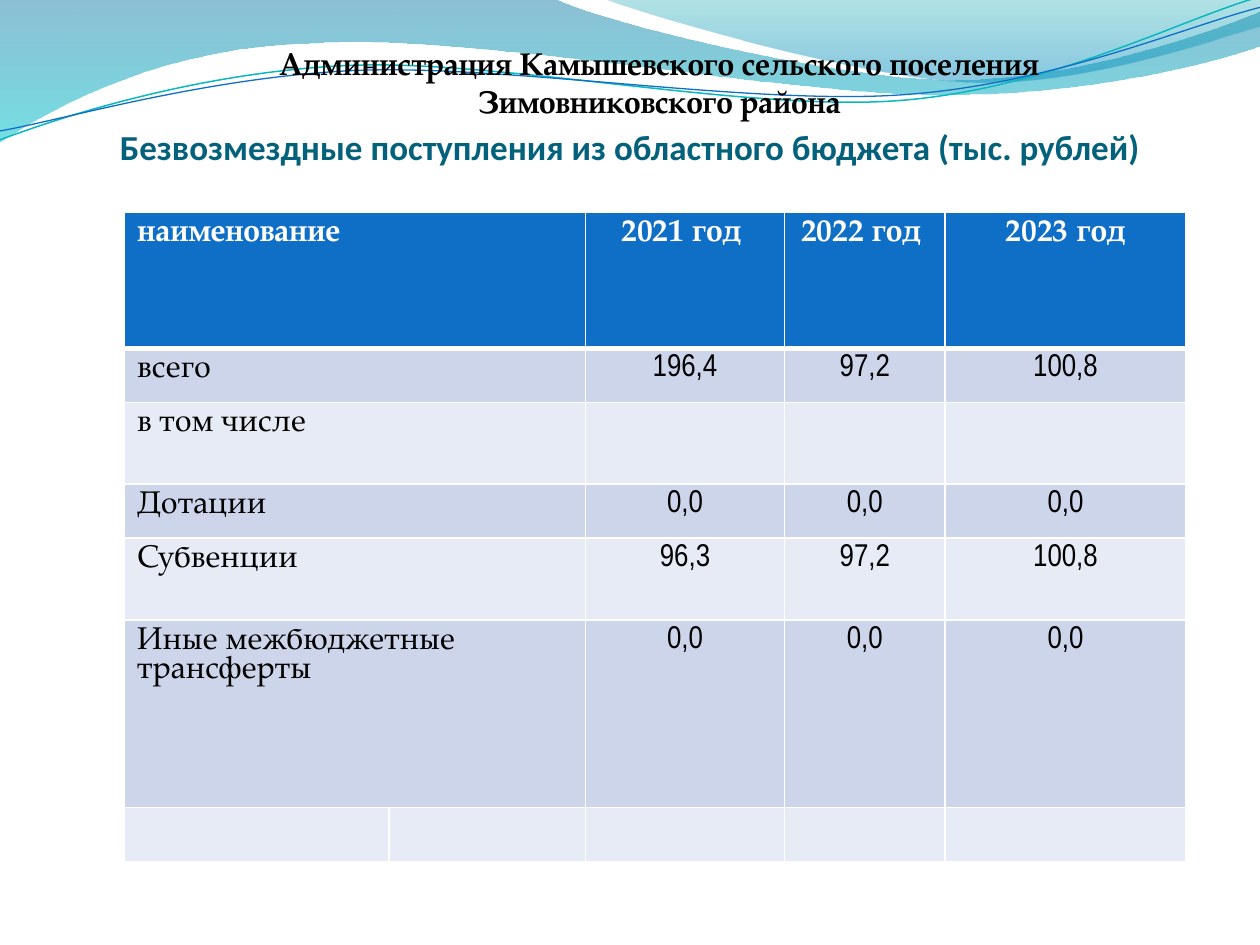
from dataclasses import dataclass

import pptx
import pptx.dml.color
import pptx.enum.text
import pptx.oxml
import pptx.oxml.ns
import pptx.util
from pptx.util import Cm, Pt

SERIF, SANS, NARROW = "TeX Gyre Pagella", "Calibri", "Arial Narrow"
BLUE, TEAL, BLACK, WHITE = "0F6FC6", "04617B", "000000", "FFFFFF"
BANDS = ("CCD5EA", "E7EBF5")
LEFT = pptx.enum.text.PP_ALIGN.LEFT
CENTER = pptx.enum.text.PP_ALIGN.CENTER
NS = pptx.oxml.ns.nsdecls("a")

Point = tuple[float, float]


@dataclass
class Wave:
    """Outline in cm: one point is a straight segment, three a cubic curve."""
    start: Point
    segments: list[tuple[Point, ...]]
    gradient: tuple[tuple[int, str, int], ...] = ()  # position, colour, opacity
    line: str = ""
    width: float = 0


@dataclass
class TextStyle:
    font: str
    size: float
    color: str
    bold: bool = False


WAVES = [
    Wave((0, 0), [
        ((11.18, -0.03),),
        ((12.09, 0.43), (16.87, 1.6), (19.25, 1.6)),
        ((21.67, 1.6), (24.33, 0.66), (25.4, 0.23)),
        ((25.43, 0.91),),
        ((24.97, 1.12), (22.1, 1.93), (18.95, 1.91)),
        ((15.8, 1.91), (9.7, 0.71), (6.53, 0.86)),
        ((3.28, 0.91), (1.17, 2.11), (-0.03, 2.87)),
    ], gradient=((0, "0074A1", 45), (100, "00C6CF", 55))),
    Wave((12.17, -0.03), [
        ((12.93, 0.28), (17.32, 1.57), (19.53, 1.65)),
        ((21.74, 1.75), (24.41, 0.81), (25.4, 0.53)),
        ((25.4, 0),),
    ], gradient=((0, "00A1A9", 30), (80, "008BBF", 45))),
    Wave((0, 2.82), [
        ((1.22, 2.36), (4.01, 1.45), (7.04, 1.32)),
        ((10.03, 1.19), (15.06, 2.26), (18.11, 2.03)),
        ((21.16, 1.8), (23.83, 0.38), (25.35, -0.05)),
    ], line="0AB8BF", width=0.85),
    Wave((0, 2.64), [
        ((1.19, 2.44), (4.17, 1.55), (7.19, 1.42)),
        ((10.24, 1.3), (15.16, 2.13), (18.21, 1.91)),
        ((21.23, 1.7), (23.9, 0.53), (25.4, 0.15)),
    ], line=BLUE, width=0.75),
]

COLUMN_WIDTHS = (5.33, 3.96, 4.02, 3.23, 4.86)
ROW_HEIGHTS = (2.74, 1.09, 1.65, 1.09, 1.65, 3.78, 1.09)
# The name spans the first two columns; the last row is empty and unmerged
BUDGET = [
    ("наименование", "2021 год ", "2022 год ", "2023 год"),
    ("всего", "196,4", "97,2", "100,8"),
    ("в том числе", "", "", ""),
    ("Дотации", "0,0", "0,0", "0,0"),
    ("Субвенции", "96,3", "97,2", "100,8"),
    ("Иные межбюджетные трансферты", "0,0", "0,0", "0,0"),
]


def rgb(color: str) -> pptx.dml.color.RGBColor:
    return pptx.dml.color.RGBColor.from_string(color)


def bend_segments(shape, segments: list[tuple[Point, ...]]) -> None:
    """Turn each run of three straight steps into one cubic curve."""
    steps = iter(list(shape.element.iter(pptx.oxml.ns.qn("a:lnTo"))))
    for segment in segments:
        corners = [next(steps) for _ in segment]
        if len(corners) == 3:
            curve = pptx.oxml.parse_xml(f"<a:cubicBezTo {NS}/>")
            corners[0].addprevious(curve)
            for corner in corners:
                curve.append(corner[0])
                corner.getparent().remove(corner)


def draw_wave(slide, wave: Wave) -> None:
    outline = slide.shapes.build_freeform(Cm(wave.start[0]), Cm(wave.start[1]))
    outline.add_line_segments(
        [(Cm(x), Cm(y)) for segment in wave.segments for x, y in segment],
        close=bool(wave.gradient))
    shape = outline.convert_to_shape()
    bend_segments(shape, wave.segments)
    shape.shadow.inherit = False
    if wave.line:
        shape.fill.background()
        shape.line.color.rgb = rgb(wave.line)
        shape.line.width = Pt(wave.width)
        return
    shape.line.fill.background()
    stops = "".join(
        f'<a:gs pos="{position * 1000}"><a:srgbClr val="{color}">'
        f'<a:alpha val="{opacity * 1000}"/></a:srgbClr></a:gs>'
        for position, color, opacity in wave.gradient)
    geometry = shape.element.spPr.find(pptx.oxml.ns.qn("a:custGeom"))
    geometry.addnext(pptx.oxml.parse_xml(
        f'<a:gradFill {NS} rotWithShape="1"><a:gsLst>{stops}</a:gsLst>'
        '<a:lin ang="5400000" scaled="1"/></a:gradFill>'))


def write(frame, text: str, style: TextStyle, align) -> None:
    frame.text = text
    paragraph = frame.paragraphs[0]
    paragraph.alignment = align
    for run in paragraph.runs:
        run.font.name = style.font
        run.font.size = Pt(style.size)
        run.font.bold = style.bold
        run.font.color.rgb = rgb(style.color)


def add_heading(slide, box: tuple[float, ...], text: str, style: TextStyle,
                anchor, margins: tuple[float, ...]) -> None:
    frame = slide.shapes.add_textbox(*map(Cm, box)).text_frame
    frame.word_wrap = True
    frame.vertical_anchor = anchor
    (frame.margin_left, frame.margin_top,
     frame.margin_right, frame.margin_bottom) = map(Cm, margins)
    write(frame, text, style, CENTER)


def style_cell(cell, row: int) -> None:
    cell.fill.solid()
    cell.fill.fore_color.rgb = rgb(BLUE if row == 0 else BANDS[(row - 1) % 2])
    thick_side = {0: "B", 1: "T"}.get(row)
    for index, side in enumerate("LRTB"):
        width = Pt(3 if side == thick_side else 1)
        cell._tc.get_or_add_tcPr().insert(index, pptx.oxml.parse_xml(
            f'<a:ln{side} {NS} w="{width}"><a:solidFill>'
            f'<a:srgbClr val="{WHITE}"/></a:solidFill></a:ln{side}>'))


def add_budget_table(slide) -> None:
    table = slide.shapes.add_table(
        len(ROW_HEIGHTS), len(COLUMN_WIDTHS), Cm(2.51), Cm(4.28),
        Cm(sum(COLUMN_WIDTHS)), Cm(sum(ROW_HEIGHTS))).table
    table.first_row = table.horz_banding = False
    for column, width in zip(table.columns, COLUMN_WIDTHS):
        column.width = Cm(width)
    for row, height in enumerate(ROW_HEIGHTS):
        table.rows[row].height = Cm(height)
        for cell in table.rows[row].cells:
            style_cell(cell, row)

    header = TextStyle(SERIF, 18, WHITE, bold=True)
    name, amount = TextStyle(SERIF, 18, BLACK), TextStyle(NARROW, 18, BLACK)
    for row, entries in enumerate(BUDGET):
        table.cell(row, 0).merge(table.cell(row, 1))
        for column, text in zip((0, 2, 3, 4), entries):
            style = header if row == 0 else amount if column else name
            frame = table.cell(row, column).text_frame
            write(frame, text, style, CENTER if column else LEFT)
            frame.paragraphs[0].line_spacing = 0.92


def main() -> None:
    presentation = pptx.Presentation()
    presentation.slide_width, presentation.slide_height = Cm(25.4), Cm(19.05)
    slide = presentation.slides.add_slide(presentation.slide_layouts[6])

    # Wavy band along the top
    for wave in WAVES:
        draw_wave(slide, wave)

    # Title and table
    anchors = pptx.enum.text.MSO_ANCHOR
    add_heading(slide, (1.17, 1.96, 23.06, 1.42),
                "Безвозмездные поступления из областного бюджета (тыс. рублей)",
                TextStyle(SANS, 20, TEAL, bold=True),
                anchors.BOTTOM, (0, 0.13, 0, 0))
    add_budget_table(slide)

    # Name of the administration
    add_heading(slide, (4.5, 0, 17.6, 2.57),
                "Администрация Камышевского сельского поселения "
                "Зимовниковского района",
                TextStyle(SERIF, 18, BLACK, bold=True),
                anchors.TOP, (0.25, 0.89, 0.25, 0.13))

    presentation.save("out.pptx")


if __name__ == "__main__":
    main()
